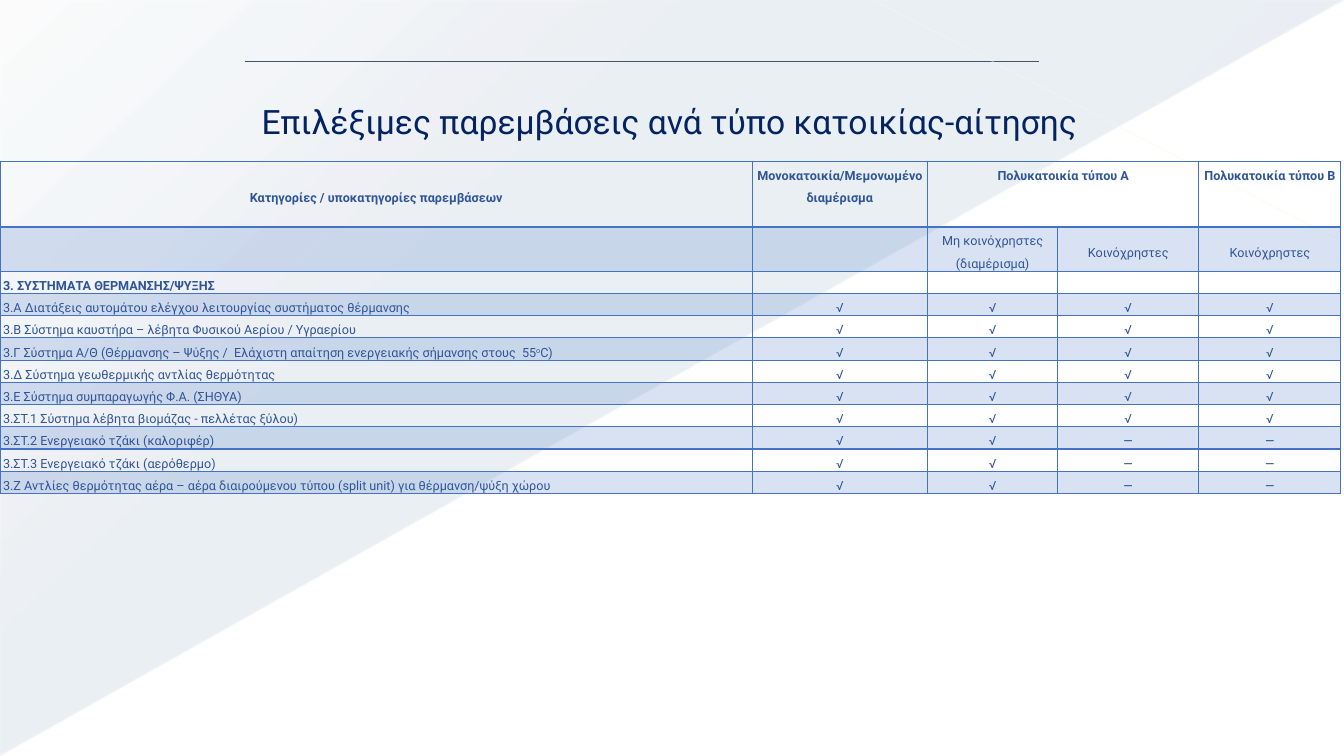
from dataclasses import dataclass

from lxml.etree import SubElement
from pptx import Presentation
from pptx.dml.color import RGBColor
from pptx.enum.shapes import MSO_CONNECTOR as Conn, MSO_SHAPE as Shape
from pptx.enum.text import MSO_ANCHOR as Anchor, PP_ALIGN as Align
from pptx.oxml import parse_xml
from pptx.oxml.ns import nsdecls, qn
from pptx.slide import Slide
from pptx.table import _Cell as Cell
from pptx.util import Inches, Pt


@dataclass(frozen=True)
class Theme:
    font: str = "Roboto"
    navy: str = "002060"
    text: str = "2F5597"
    grid: str = "4472C4"
    wash: str = "1F497D"
    rule: str = "44546A"
    cream: str = "FAF8EE"
    title: float = 24
    body: float = 9


@dataclass(frozen=True)
class Line:
    start: tuple[float, float]
    end: tuple[float, float]
    color: str
    width: float
    alpha: int = 100


@dataclass(frozen=True)
class Entry:
    name: str
    marks: str


THEME = Theme()
LINES = [
    Line((2.43, 0.61), (10.31, 0.61), THEME.rule, 1),
    Line((13.32, 2.4), (8.68, 0.01), THEME.cream, 0.75, 45),
]
WIDTHS = [7.46, 1.74, 1.29, 1.4, 1.41]
HEADS = ["Κατηγορίες / υποκατηγορίες παρεμβάσεων", "Μονοκατοικία/Μεμονωμένο διαμέρισμα",
         "Πολυκατοικία τύπου Α", "", "Πολυκατοικία τύπου Β"]
SUBS = ["", "", "Μη κοινόχρηστες (διαμέρισμα)", "Κοινόχρηστες", "Κοινόχρηστες"]
GROUP = "3. ΣΥΣΤΗΜΑΤΑ ΘΕΡΜΑΝΣΗΣ/ΨΥΞΗΣ"
# A caret on either side marks a superscript.
ENTRIES = [
    Entry("3.Α Διατάξεις αυτομάτου ελέγχου λειτουργίας συστήματος θέρμανσης", "√√√√"),
    Entry("3.Β Σύστημα καυστήρα – λέβητα Φυσικού Αερίου / Υγραερίου", "√√√√"),
    Entry("3.Γ Σύστημα Α/Θ (Θέρμανσης – Ψύξης /  Ελάχιστη απαίτηση ενεργειακής "
          "σήμανσης στους  55^o^C)", "√√√√"),
    Entry("3.Δ Σύστημα γεωθερμικής αντλίας θερμότητας", "√√√√"),
    Entry("3.Ε Σύστημα συμπαραγωγής Φ.Α. (ΣΗΘΥΑ)", "√√√√"),
    Entry("3.ΣΤ.1 Σύστημα λέβητα βιομάζας - πελλέτας ξύλου)", "√√√√"),
    Entry("3.ΣΤ.2 Ενεργειακό τζάκι (καλοριφέρ)", "√√──"),
    Entry("3.ΣΤ.3 Ενεργειακό τζάκι (αερόθερμο)", "√√──"),
    Entry("3.Ζ Αντλίες θερμότητας αέρα – αέρα διαιρούμενου τύπου (split unit) "
          "για θέρμανση/ψύξη χώρου", "√√──"),
]


def add_run(para, text: str, size: float, color: str, bold: bool = False):
    run = para.add_run()
    run.text = text
    run.font.name = THEME.font
    run.font.size = Pt(size)
    run.font.bold = bold
    run.font.color.rgb = RGBColor.from_string(color)
    return run


def fade(node, alpha: int) -> None:
    """Make the colour inside a fill or line element see-through."""
    tone = next(node.iter(qn("a:srgbClr")))
    SubElement(tone, qn("a:alpha"), val=str(alpha * 1000))


def add_wash(slide: Slide) -> None:
    """Draw the pale triangle over the upper left half."""
    wash = slide.shapes.add_shape(Shape.RIGHT_TRIANGLE, Inches(0.01), Inches(0.01),
                                  Inches(13.31), Inches(7.48))
    wash.shadow.inherit = False
    wash.line.fill.background()
    wash.rotation = 180
    props = wash._element.spPr
    props.find(qn("a:xfrm")).set("flipH", "1")
    stops = "".join(
        f'<a:gs pos="{pos * 1000}"><a:srgbClr val="{THEME.wash}">'
        f'<a:alpha val="{alpha * 1000}"/></a:srgbClr></a:gs>'
        for pos, alpha in [(0, 10), (70, 8), (100, 1)])
    props.find(qn("a:prstGeom")).addnext(parse_xml(
        f'<a:gradFill {nsdecls("a")} rotWithShape="1"><a:gsLst>{stops}</a:gsLst>'
        f'<a:lin ang="{133 * 60000}" scaled="0"/></a:gradFill>'))


def add_line(slide: Slide, line: Line) -> None:
    ends = [Inches(n) for n in (*line.start, *line.end)]
    conn = slide.shapes.add_connector(Conn.STRAIGHT, *ends)
    conn.line.width = Pt(line.width)
    conn.line.color.rgb = RGBColor.from_string(line.color)
    props = conn._element.spPr
    if line.alpha < 100:
        fade(props, line.alpha)
    SubElement(props, qn("a:effectLst"))


def set_title(slide: Slide, text: str) -> None:
    title = slide.shapes.title
    title.left, title.top = Inches(0.89), Inches(0.94)
    title.width, title.height = Inches(11.5), Inches(0.58)
    title.text_frame.vertical_anchor = Anchor.MIDDLE
    para = title.text_frame.paragraphs[0]
    para.alignment = Align.CENTER
    para.line_spacing = 0.9
    add_run(para, text, THEME.title, THEME.navy)


def set_edges(cell: Cell, top: float, bottom: float) -> None:
    props = cell._tc.get_or_add_tcPr()
    edges = {"L": 1, "R": 1, "T": top, "B": bottom}
    for spot, (side, width) in enumerate(edges.items()):
        props.insert(spot, parse_xml(
            f'<a:ln{side} {nsdecls("a")} w="{Pt(width)}"><a:solidFill>'
            f'<a:srgbClr val="{THEME.grid}"/></a:solidFill></a:ln{side}>'))


def fill_cell(cell: Cell, text: str, align: Align, anchor: Anchor,
              bold: bool, band: bool) -> None:
    cell.margin_left = cell.margin_right = Inches(0.03)
    cell.margin_top = cell.margin_bottom = 0
    cell.vertical_anchor = anchor
    if band:
        cell.fill.solid()
        cell.fill.fore_color.rgb = RGBColor.from_string(THEME.grid)
        fade(cell._tc.tcPr, 20)
    else:
        cell.fill.background()
    para = cell.text_frame.paragraphs[0]
    para.alignment = align
    para.line_spacing = 1.5
    for spot, part in enumerate(text.split("^") if text else []):
        run = add_run(para, part, THEME.body, THEME.text, bold)
        if spot % 2:
            run.font._element.set("baseline", "30000")
    if not text:
        SubElement(para._p, qn("a:endParaRPr"), sz=str(int(THEME.body * 100)))


def add_grid(slide: Slide) -> None:
    rows = [HEADS, SUBS, [GROUP, "", "", "", ""]]
    rows += [[entry.name, *entry.marks] for entry in ENTRIES]
    highs = [0.65, 0.43] + [0.2] * (len(rows) - 2)
    table = slide.shapes.add_table(len(rows), len(WIDTHS), 0, Inches(1.6),
                                   Inches(sum(WIDTHS)), Inches(sum(highs))).table
    table.first_row = table.horz_banding = False
    for col, width in zip(table.columns, WIDTHS):
        col.width = Inches(width)
    for r, (row, high) in enumerate(zip(rows, highs)):
        table.rows[r].height = Inches(high)
        for c, text in enumerate(row):
            cell = table.cell(r, c)
            align = Align.LEFT if c == 0 and r > 1 else Align.CENTER
            anchor = Anchor.TOP if r == 0 and c else Anchor.MIDDLE
            fill_cell(cell, text, align, anchor, r in (0, 2), r % 2 == 1)
            set_edges(cell, 2 if r == 1 else 1, 2 if r == 0 else 1)
    table.cell(0, 2).merge(table.cell(0, 3))


def main() -> None:
    deck = Presentation()
    deck.slide_width, deck.slide_height = Inches(13.33), Inches(7.5)
    slide = deck.slides.add_slide(deck.slide_layouts[5])
    add_wash(slide)
    for line in LINES:
        add_line(slide, line)
    set_title(slide, "Επιλέξιμες παρεμβάσεις ανά τύπο κατοικίας-αίτησης")
    add_grid(slide)
    deck.save("out.pptx")


if __name__ == "__main__":
    main()
